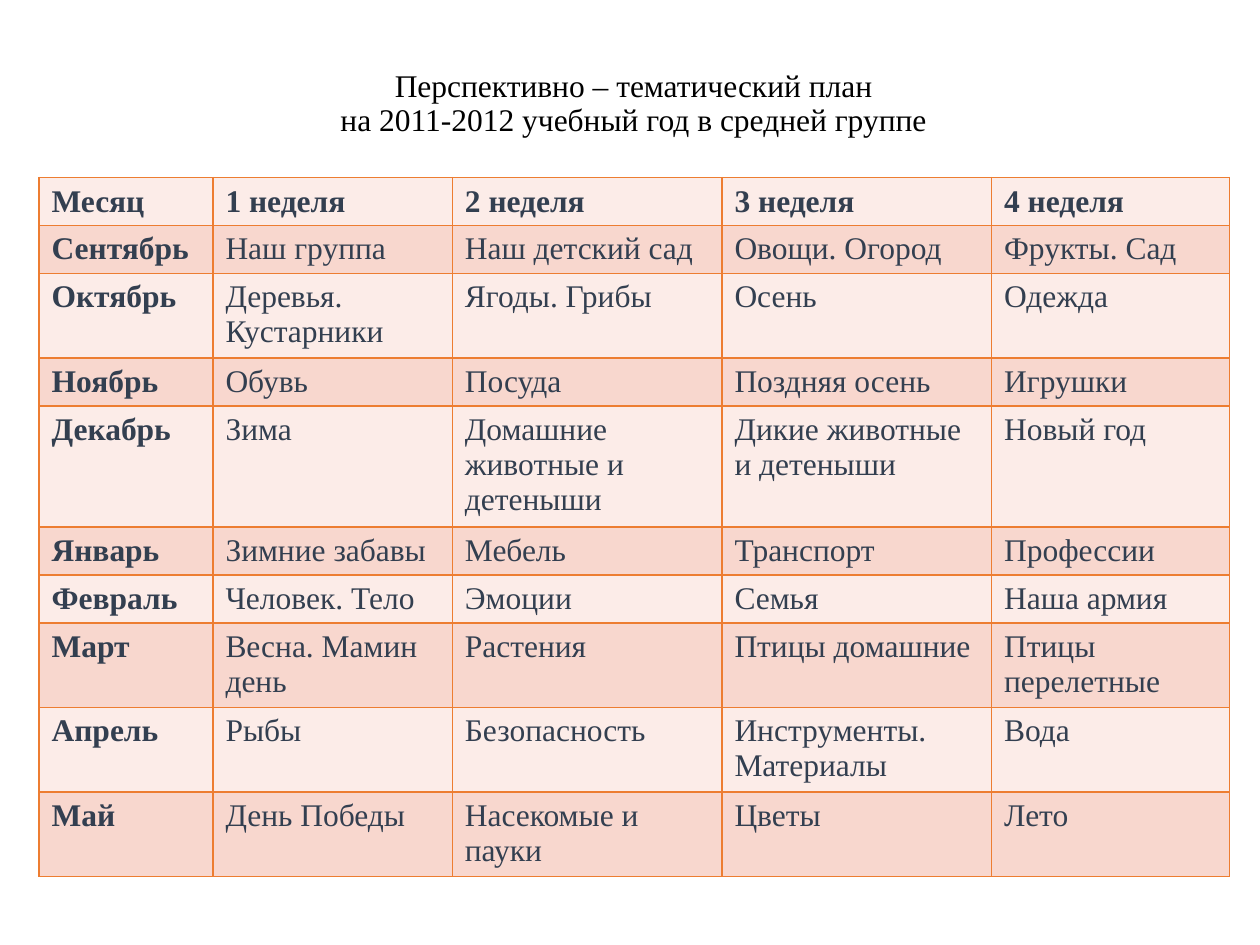
from dataclasses import dataclass

from lxml.etree import SubElement
from pptx import Presentation
from pptx.dml.color import RGBColor
from pptx.enum.text import MSO_ANCHOR, PP_ALIGN
from pptx.oxml.ns import qn
from pptx.util import Inches, Pt


@dataclass(frozen=True)
class Theme:
    font: str = "Times New Roman"
    size: int = 18
    title: str = "000000"
    text: str = "333F50"
    border: str = "ED7D31"
    border_width: int = 1
    bands: tuple = ("FCECE8", "F8D7CE")


THEME = Theme()
WIDTH, HEIGHT = Inches(10), Inches(7.5)

TITLE = "Перспективно – тематический план\vна 2011-2012 учебный год в средней группе"
PLAN = [
    ("Месяц", "1 неделя", "2 неделя", "3 неделя", "4 неделя"),
    ("Сентябрь", "Наш группа", "Наш детский сад", "Овощи. Огород", "Фрукты. Сад"),
    ("Октябрь", "Деревья. Кустарники", "Ягоды. Грибы", "Осень", "Одежда"),
    ("Ноябрь", "Обувь", "Посуда", "Поздняя осень", "Игрушки"),
    ("Декабрь", "Зима", "Домашние животные и детеныши", "Дикие животные и детеныши", "Новый год"),
    ("Январь", "Зимние забавы", "Мебель", "Транспорт", "Профессии"),
    ("Февраль", "Человек. Тело", "Эмоции", "Семья", "Наша армия"),
    ("Март", "Весна. Мамин день", "Растения", "Птицы домашние", "Птицы перелетные"),
    ("Апрель", "Рыбы", "Безопасность", "Инструменты. Материалы", "Вода"),
    ("Май", "День Победы", "Насекомые и пауки", "Цветы", "Лето"),
]
COLUMN_WEIGHTS = (1.38, 1.9, 2.14, 2.14, 1.89)
ROW_LINES = (1, 1, 2, 1, 3, 1, 1, 2, 2, 2)
FIRST_LINE, NEXT_LINE = 0.38, 0.29


def share_box(left, top, width, height):
    return (round(left * WIDTH), round(top * HEIGHT),
            round(width * WIDTH), round(height * HEIGHT))


def format_runs(para, color, bold=False):
    for span in para.runs:
        span.font.name = THEME.font
        span.font.size = Pt(THEME.size)
        span.font.bold = bold
        span.font.color.rgb = RGBColor.from_string(color)


def add_borders(cell):
    properties = cell._tc.get_or_add_tcPr()
    for side in ("a:lnL", "a:lnR", "a:lnT", "a:lnB"):
        line = SubElement(properties, qn(side), w=str(Pt(THEME.border_width)))
        fill = SubElement(line, qn("a:solidFill"))
        SubElement(fill, qn("a:srgbClr"), val=THEME.border)


def place_title(page, box):
    title = page.shapes.title
    title.left, title.top, title.width, title.height = box
    frame = title.text_frame
    frame.text = TITLE
    frame.word_wrap = True
    frame.vertical_anchor = MSO_ANCHOR.MIDDLE
    para = frame.paragraphs[0]
    para.alignment = PP_ALIGN.CENTER
    para.line_spacing = 0.9
    format_runs(para, THEME.title)


def place_plan(page, box):
    width, height = box[2:]
    table = page.shapes.add_table(len(PLAN), len(COLUMN_WEIGHTS), *box).table
    for column, weight in zip(table.columns, COLUMN_WEIGHTS):
        column.width = round(width * weight / sum(COLUMN_WEIGHTS))
    row_weights = [FIRST_LINE + NEXT_LINE * (lines - 1) for lines in ROW_LINES]
    for row, weight in zip(table.rows, row_weights):
        row.height = round(height * weight / sum(row_weights))
    for row_index, entries in enumerate(PLAN):
        for column_index, entry in enumerate(entries):
            cell = table.cell(row_index, column_index)
            add_borders(cell)
            cell.fill.solid()
            cell.fill.fore_color.rgb = RGBColor.from_string(THEME.bands[row_index % 2])
            cell.text_frame.text = entry
            is_heading = row_index == 0 or column_index == 0
            format_runs(cell.text_frame.paragraphs[0], THEME.text, is_heading)


def main():
    deck = Presentation()
    deck.slide_width, deck.slide_height = WIDTH, HEIGHT
    page = deck.slides.add_slide(deck.slide_layouts.get_by_name("Title Only"))
    place_title(page, share_box(0.023, 0.03, 0.96, 0.16))
    place_plan(page, share_box(0.031, 0.188, 0.945, 0.74))
    deck.save("out.pptx")


if __name__ == "__main__":
    main()
